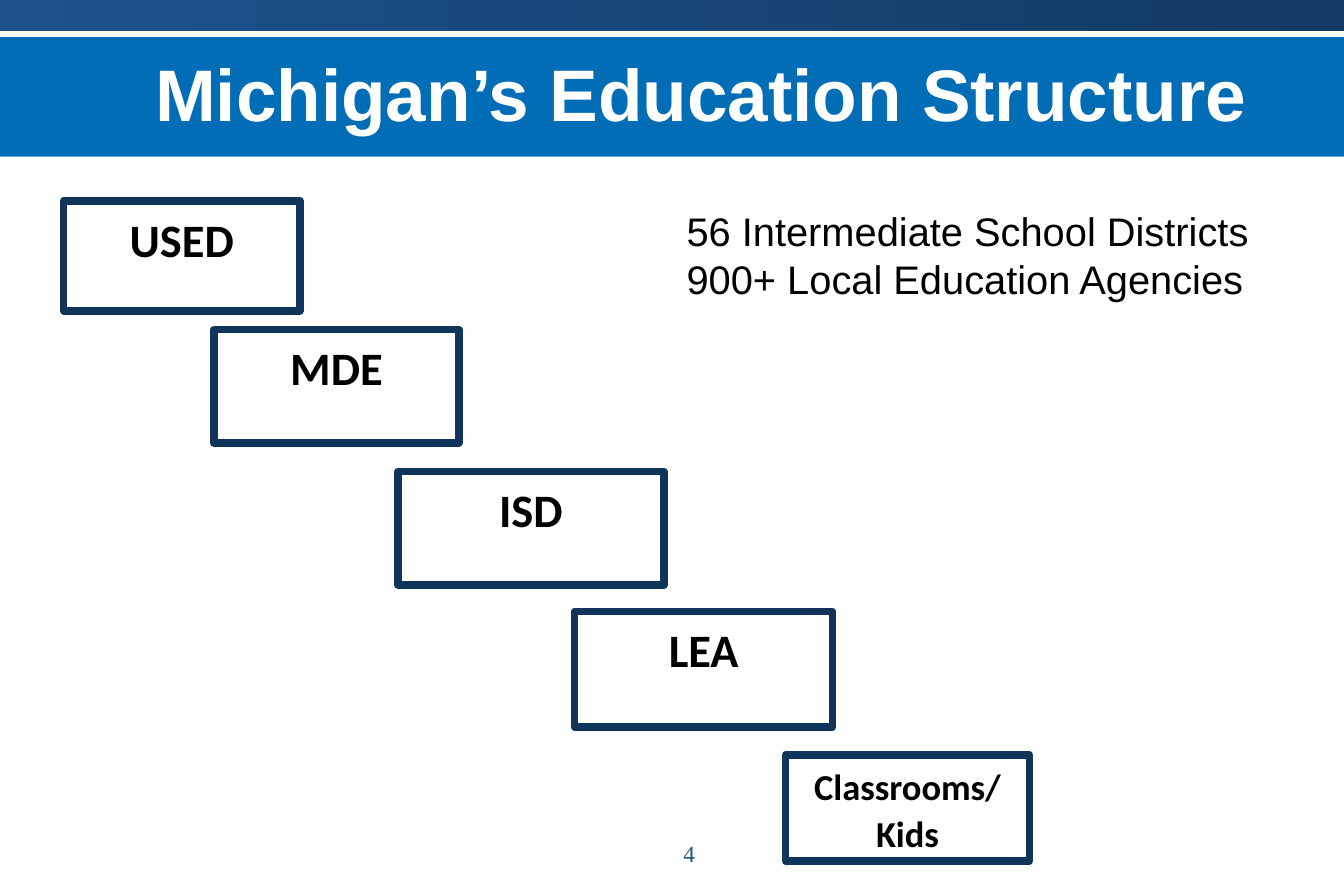
from pptx import Presentation
from pptx.dml.color import RGBColor
from pptx.enum.shapes import MSO_SHAPE
from pptx.enum.text import MSO_ANCHOR, PP_ALIGN
from pptx.util import Cm, Pt

COLORS = {
    "bar": "006DB6",
    "strip_start": "1D528D",
    "strip_end": "143963",
    "border": "11345A",
    "white": "FFFFFF",
    "black": "000000",
    "number": "1D528D",
}

SLIDE_W, SLIDE_H = 28.58, 19.05

# Level name, position and size in cm, text size in points
LEVELS = [
    ("USED", (1.35, 4.27, 5.03, 2.34), 28),
    ("MDE", (4.55, 7.01, 5.21, 2.41), 28),
    ("ISD", (8.46, 10.03, 5.66, 2.41), 28),
    ("LEA", (12.22, 13, 5.49, 2.46), 28),
    ("Classrooms/ Kids", (16.71, 16.05, 5.18, 2.26), 22),
]


def rgb(name):
    return RGBColor.from_string(COLORS[name])


def set_attrs(obj, values):
    for name, value in values.items():
        setattr(obj, name, value)


def write(tf, lines, font, size, color, bold=False, para=None, frame=None):
    set_attrs(tf, {"word_wrap": True, "vertical_anchor": MSO_ANCHOR.TOP,
                   **(frame or {})})
    for i, line in enumerate(lines):
        p = tf.paragraphs[0] if i == 0 else tf.add_paragraph()
        set_attrs(p, para or {})
        r = p.add_run()
        r.text = line
        set_attrs(r.font, {"name": font, "size": Pt(size), "bold": bold})
        r.font.color.rgb = rgb(color)


def add_rect(s, box):
    sp = s.shapes.add_shape(MSO_SHAPE.RECTANGLE, *map(Cm, box))
    sp.shadow.inherit = False
    return sp


def add_band(s, box, *colors):
    sp = add_rect(s, box)
    sp.line.fill.background()
    if len(colors) == 1:
        sp.fill.solid()
        sp.fill.fore_color.rgb = rgb(colors[0])
        return
    sp.fill.gradient()
    sp.fill.gradient_angle = 0
    for stop, color in zip(sp.fill.gradient_stops, colors):
        stop.color.rgb = rgb(color)


def add_level(s, name, box, size):
    sp = add_rect(s, box)
    sp.fill.solid()
    sp.fill.fore_color.rgb = rgb("white")
    sp.line.color.rgb = rgb("border")
    sp.line.width = Pt(4.5)
    write(sp.text_frame, [name], "Calibri", size, "black", bold=True,
          para={"alignment": PP_ALIGN.CENTER, "line_spacing": 1.07,
                "space_after": Pt(8)})


def add_text(s, box, lines, font, size, color, **options):
    sp = s.shapes.add_textbox(*map(Cm, box))
    write(sp.text_frame, lines, font, size, color, **options)


def main():
    prs = Presentation()
    set_attrs(prs, {"slide_width": Cm(SLIDE_W), "slide_height": Cm(SLIDE_H)})
    s = prs.slides.add_slide(prs.slide_layouts[6])

    # Header bands and title
    add_band(s, (0, 0.79, SLIDE_W, 2.54), "bar")
    add_band(s, (0, 0, SLIDE_W, 0.66), "strip_start", "strip_end")
    add_text(s, (3.05, 0.76, 25.53, 2.41), ["Michigan’s Education Structure"],
             "Arial", 44, "white", bold=True,
             frame={"vertical_anchor": MSO_ANCHOR.MIDDLE})

    # Staircase of levels
    for name, box, size in LEVELS:
        add_level(s, name, box, size)

    # District counts
    add_text(s, (14.35, 4.27, 12.8, 2.31),
             ["56 Intermediate School Districts",
              "900+ Local Education Agencies"], "Arial", 24, "black")

    # Slide number
    add_text(s, (11.33, 17.73, 6.65, 1.32), ["4"], "Times New Roman", 14,
             "number", para={"alignment": PP_ALIGN.CENTER})

    prs.save("out.pptx")


if __name__ == "__main__":
    main()
